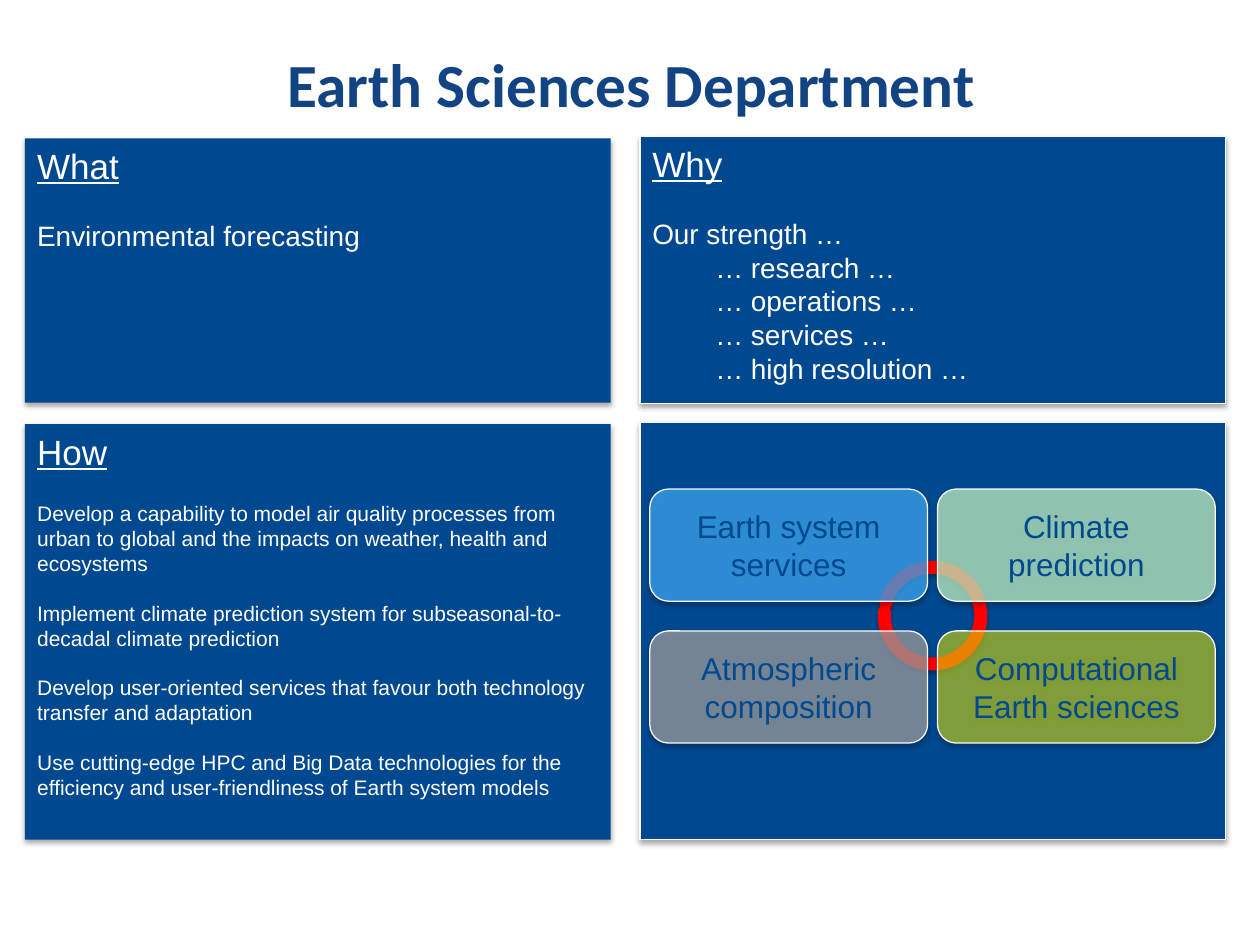
from math import cos, radians, sin

from lxml.etree import SubElement
from pptx import Presentation
from pptx.dml.color import RGBColor
from pptx.enum.shapes import MSO_SHAPE
from pptx.enum.text import MSO_ANCHOR, PP_ALIGN
from pptx.oxml import parse_xml
from pptx.oxml.ns import qn
from pptx.util import Cm, Pt

NAVY = RGBColor(0x00, 0x49, 0x90)
TITLE_BLUE = RGBColor(0x12, 0x44, 0x84)
WHITE = RGBColor(0xFF, 0xFF, 0xFF)
EDGE = RGBColor(0xF9, 0xF9, 0xF9)
RED = RGBColor(0xFF, 0x00, 0x00)
SKY = RGBColor(0x40, 0xB0, 0xFF)
GREY = RGBColor(0xA6, 0xA6, 0xA6)
YELLOW = RGBColor(0xFF, 0xFF, 0x00)
MINT = RGBColor(0xCC, 0xFF, 0xCC)
LIGHT_GREY = RGBColor(0xF8, 0xF8, 0xF8)
MID_GREY = RGBColor(0xBD, 0xBD, 0xBD)

SHADOW = (
    '<a:effectLst xmlns:a="http://schemas.openxmlformats.org/drawingml/2006/main">'
    '<a:outerShdw blurRad="40000" dist="23000" dir="5400000" rotWithShape="0">'
    '<a:srgbClr val="000000"><a:alpha val="35000"/></a:srgbClr>'
    '</a:outerShdw></a:effectLst>'
)


def write(box, text, size, color=WHITE, font="Arial", bold=False, underline=False,
          align=PP_ALIGN.LEFT, before=0, indent=0):
    """Fill the first paragraph of the box, or add one when it is taken."""
    frame = box.text_frame
    frame.word_wrap = True
    para = frame.paragraphs[0] if not frame.text else frame.add_paragraph()
    para.alignment = align
    if before:
        para.space_before = Pt(before)
    if indent:
        para.level = 1
        properties = para._p.get_or_add_pPr()
        properties.set("marL", str(Cm(indent)))
        properties.set("indent", "0")
    span = para.add_run()
    span.text = text
    span.font.name = font
    span.font.size = Pt(size)
    span.font.bold = bold
    span.font.underline = underline
    span.font.color.rgb = color
    return para


def add_box(kind, left, top, width, height, fill, opacity=100, edged=True):
    """Add a filled box with a soft shadow below it."""
    box = page.shapes.add_shape(kind, Cm(left), Cm(top), Cm(width), Cm(height))
    box.fill.solid()
    box.fill.fore_color.rgb = fill
    if opacity < 100:
        color = box._element.spPr.find(qn("a:solidFill"))[0]
        SubElement(color, qn("a:alpha"), val=str(opacity * 1000))
    if edged:
        box.line.color.rgb = EDGE
        box.line.width = Pt(0.75)
    else:
        box.line.fill.background()
    box._element.spPr.append(parse_xml(SHADOW))
    return box


deck = Presentation()
deck.slide_width, deck.slide_height = Cm(25.4), Cm(19.05)
page = deck.slides.add_slide(deck.slide_layouts[6])

title = page.shapes.add_textbox(Cm(1.3), Cm(0.6), Cm(22.86), Cm(2.34))
title.text_frame.vertical_anchor = MSO_ANCHOR.MIDDLE
heading = write(title, "Earth Sciences Department", 35, color=TITLE_BLUE,
                font="Calibri", bold=True, align=PP_ALIGN.CENTER)
heading.line_spacing = 0.9

# Four panels; the lower right one holds the diagram
PANEL_WIDTH = 11.81
LEFT, RIGHT = 0.5, 12.9
add_box(MSO_SHAPE.RECTANGLE, RIGHT, 8.52, PANEL_WIDTH, 8.4, NAVY)
what = add_box(MSO_SHAPE.RECTANGLE, LEFT, 2.79, PANEL_WIDTH, 5.33, NAVY, edged=False)
how = add_box(MSO_SHAPE.RECTANGLE, LEFT, 8.55, PANEL_WIDTH, 8.38, NAVY, edged=False)
why = add_box(MSO_SHAPE.RECTANGLE, RIGHT, 2.75, PANEL_WIDTH, 5.38, NAVY)
for panel, name in ((what, "What"), (how, "How"), (why, "Why")):
    panel.text_frame.vertical_anchor = MSO_ANCHOR.TOP
    write(panel, name, 20, underline=True)

write(what, "Environmental forecasting", 16, before=18.4)

goals = [
    "Develop a capability to model air quality processes from urban to global "
    "and the impacts on weather, health and ecosystems",
    "Implement climate prediction system for subseasonal-to-decadal climate prediction",
    "Develop user-oriented services that favour both technology transfer and adaptation",
    "Use cutting-edge HPC and Big Data technologies for the efficiency and "
    "user-friendliness of Earth system models",
]
for index, goal in enumerate(goals):
    write(how, goal, 12, before=13.8 if index else 16.1)

write(why, "Our strength …", 16, before=18.4)
for strength in ("research", "operations", "services", "high resolution"):
    write(why, f"… {strength} …", 16, indent=1.27)

# Thin, almost closed ring linking the four groups
CENTER_X, CENTER_Y = 18.8, 12.41
OUTER, INNER = 1, 0.95
angles = range(194, 546, 9)
outline = [(OUTER, angle) for angle in angles] + [(INNER, angle) for angle in reversed(angles)]
points = [(Cm(CENTER_X + radius * cos(radians(angle))),
           Cm(CENTER_Y + radius * sin(radians(angle)))) for radius, angle in outline]
builder = page.shapes.build_freeform(*points[0])
builder.add_line_segments(points[1:], close=True)
ring = builder.convert_to_shape()
ring.fill.gradient()
ring.fill.gradient_angle = 270
for stop, color in zip(ring.fill.gradient_stops, (LIGHT_GREY, MID_GREY)):
    stop.color.rgb = color
ring.line.color.rgb = RED
ring.line.width = Pt(6)
ring._element.spPr.append(parse_xml(SHADOW))

groups = [
    ("Earth system services", 0, 0, SKY, 70),
    ("Atmospheric composition", 0, 1, GREY, 70),
    ("Computational Earth sciences", 1, 1, YELLOW, 50),
    ("Climate prediction", 1, 0, MINT, 70),
]
for name, column, row, color, opacity in groups:
    group = add_box(MSO_SHAPE.ROUNDED_RECTANGLE, 13.1 + 5.8 * column, 9.86 + 2.86 * row,
                    5.6, 2.26, color, opacity=opacity)
    group.text_frame.vertical_anchor = MSO_ANCHOR.MIDDLE
    write(group, name, 18, color=NAVY, align=PP_ALIGN.CENTER)

deck.save("out.pptx")
